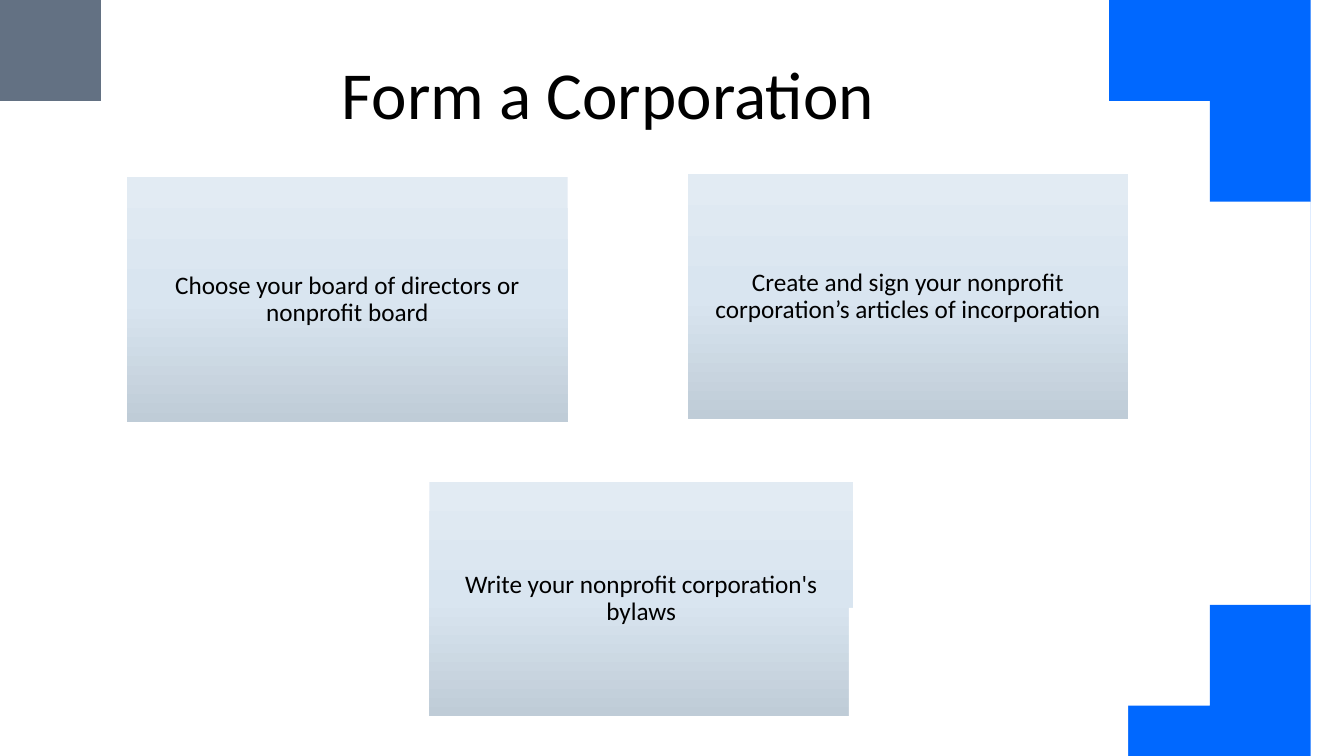
from copy import deepcopy
from math import cos, radians, sin
from pptx import Presentation
from pptx.dml.color import RGBColor
from pptx.enum.shapes import MSO_SHAPE
from pptx.enum.text import MSO_ANCHOR, PP_ALIGN
from pptx.oxml.ns import qn
from pptx.util import Inches, Pt

RECT = MSO_SHAPE.RECTANGLE
MID, LOW = MSO_ANCHOR.MIDDLE, MSO_ANCHOR.BOTTOM
LEFT, MIDDLE = PP_ALIGN.LEFT, PP_ALIGN.CENTER
HUES = {"blue": "0068FF", "slate": "637183", "white": "FFFFFF", "ink": "000000",
        "top": "E2EBF3", "mid": "D9E5F0", "base": "BFCCD7"}
WIDE, HIGH = 13.33, 7.5


def hue(name):
    return RGBColor.from_string(HUES[name])


def write(frame, text, size, align, anchor):
    frame.word_wrap = True
    frame.vertical_anchor = anchor
    para = frame.paragraphs[0]
    para.alignment = align
    para.line_spacing = 0.9
    run = para.add_run()
    run.text = text
    run.font.size = Pt(size)
    run.font.name = "Calibri"
    run.font.color.rgb = hue("ink")


deck = Presentation()
deck.slide_width, deck.slide_height = Inches(WIDE), Inches(HIGH)
slide = deck.slides.add_slide(deck.slide_layouts[5])
shapes = slide.shapes

big, small = 3.95, 1.02
arcs = [
    ((WIDE, 0), (WIDE - big, big), big, -90, "blue"),
    ((WIDE, HIGH), (WIDE - big, HIGH - big), big, 0, "blue"),
    ((0, 0), (0, 0), small, 0, "slate"),
]
for corner, (mid_x, mid_y), size, start, color in arcs:
    turns = [radians(start + step) for step in range(0, 91, 2)]
    curve = [(mid_x + size * cos(t), mid_y + size * sin(t)) for t in turns]
    pen = shapes.build_freeform(*corner, scale=Inches(1))
    pen.add_line_segments(curve, close=True)
    arc = pen.convert_to_shape()
    arc.shadow.inherit = False
    arc.fill.solid()
    arc.fill.fore_color.rgb = hue(color)
    arc.line.fill.background()

title = shapes.title
title.left, title.top, title.width, title.height = map(Inches, (3.29, 0.26, 6.14, 1.12))
write(title.text_frame, "Form a Corporation", 48, LEFT, LOW)

cards = [
    (1.26, 1.76, 4.37, 2.43, "Choose your board of directors or nonprofit board"),
    (6.82, 1.73, 4.37, 2.43, "Create and sign your nonprofit corporation’s articles of incorporation"),
    (4.26, 4.78, 4.2, 2.32, "Write your nonprofit corporation's bylaws"),
]
for *place, text in cards:
    card = shapes.add_shape(RECT, *map(Inches, place))
    card.shadow.inherit = False
    card.line.fill.background()
    card.fill.gradient()
    card.fill.gradient_angle = 270
    stops = card._element.spPr.find(".//" + qn("a:gsLst"))
    stops.insert(1, deepcopy(stops[0]))
    for stop, share, color in zip(card.fill.gradient_stops, (0, 0.5, 1), ("top", "mid", "base")):
        stop.position = share
        stop.color.rgb = hue(color)
    frame = card.text_frame
    frame.margin_left = frame.margin_right = Inches(0.13)
    frame.margin_top = frame.margin_bottom = Inches(0.14)
    write(frame, text, 18, MIDDLE, MID)

patch = shapes.add_shape(RECT, *map(Inches, (8.42, 6.03, 2.77, 1.47)))
patch.shadow.inherit = False
patch.fill.solid()
patch.fill.fore_color.rgb = hue("white")
patch.line.fill.background()

deck.save("out.pptx")
